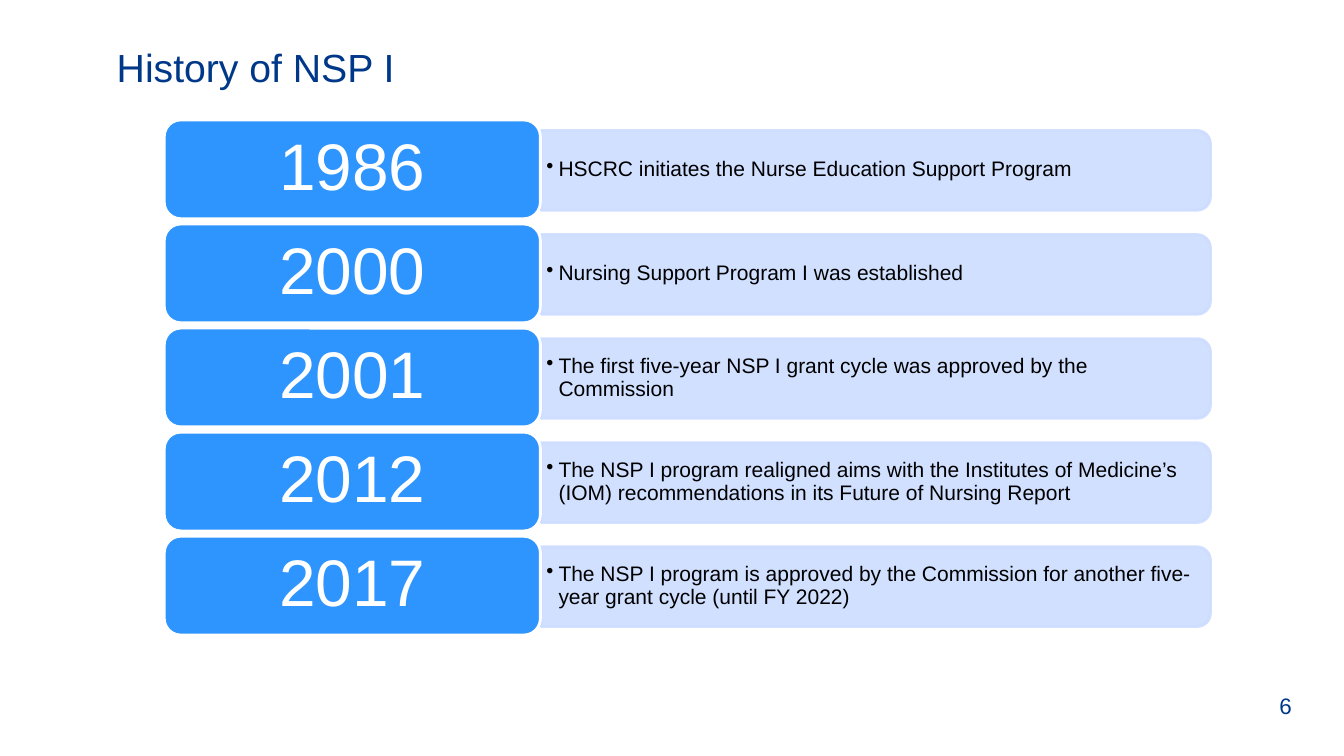
from lxml import etree
from pptx import Presentation
from pptx.dml.color import RGBColor
from pptx.enum.shapes import MSO_SHAPE
from pptx.enum.text import MSO_ANCHOR, PP_ALIGN
from pptx.oxml.ns import qn
from pptx.util import Inches, Pt

ROUND = MSO_SHAPE.ROUNDED_RECTANGLE
BAR = MSO_SHAPE.ROUND_2_SAME_RECTANGLE
TOP, MIDDLE = MSO_ANCHOR.TOP, MSO_ANCHOR.MIDDLE
LEFT, CENTER = PP_ALIGN.LEFT, PP_ALIGN.CENTER

NAVY = RGBColor(0x00, 0x38, 0x89)
BLUE = RGBColor(0x2E, 0x95, 0xFF)
PALE = RGBColor(0xCD, 0xDD, 0xFF)
WHITE = RGBColor(0xFF, 0xFF, 0xFF)
BLACK = RGBColor(0x00, 0x00, 0x00)

FIRST, LAST = 1.19, 5.32
EVENTS = [
    ("1986", "HSCRC initiates the Nurse Education Support Program"),
    ("2000", "Nursing Support Program I was established"),
    ("2001", "The first five-year NSP I grant cycle was approved by the Commission"),
    ("2012", "The NSP I program realigned aims with the Institutes of Medicine’s "
             "(IOM) recommendations in its Future of Nursing Report"),
    ("2017", "The NSP I program is approved by the Commission for another "
             "five-year grant cycle (until FY 2022)"),
]


def apply(target, values):
    for name, value in values.items():
        setattr(target, name, value)


def write(shape, text, size, color, anchor=MIDDLE, align=LEFT, pad=(0.1, 0.05), space=1.0):
    side, edge = map(Inches, pad)
    frame = shape.text_frame
    apply(frame, {
        "word_wrap": True, "vertical_anchor": anchor,
        "margin_left": side, "margin_right": side,
        "margin_top": edge, "margin_bottom": edge,
    })
    line = frame.paragraphs[0]
    apply(line, {"alignment": align, "line_spacing": space})
    run = line.add_run()
    run.text = text
    apply(run.font, {"name": "Arial", "size": Pt(size)})
    run.font.color.rgb = color
    return line


def add_text(slide, box, text, size, color, **style):
    shape = slide.shapes.add_textbox(*map(Inches, box))
    return write(shape, text, size, color, **style)


def add_block(slide, kind, box, fill, edge):
    shape = slide.shapes.add_shape(kind, *map(Inches, box))
    shape.shadow.inherit = False
    shape.fill.solid()
    shape.fill.fore_color.rgb = fill
    shape.line.color.rgb = edge
    shape.line.width = Pt(2)
    return shape


def add_bullet(line):
    props = line._p.get_or_add_pPr()
    props.set("marL", str(Inches(0.12)))
    props.set("indent", str(Inches(-0.12)))
    etree.SubElement(props, qn("a:buChar")).set("char", "•")


def add_bar(slide, top):
    bar = add_block(slide, BAR, (8.29, top - 2.82, 0.79, 6.64), PALE, PALE)
    bar.rotation = 90
    for color in bar._element.spPr.iter(qn("a:srgbClr")):
        etree.SubElement(color, qn("a:alpha")).set("val", "90000")


def add_event(slide, top, year, text):
    add_bar(slide, top)
    line = add_text(slide, (5.36, top + 0.14, 6.6, 0.71), text, 15, BLACK,
                    pad=(0.06, 0.03), space=0.9)
    add_bullet(line)
    block = add_block(slide, ROUND, (1.63, top, 3.73, 0.98), BLUE, WHITE)
    write(block, year, 47, WHITE, align=CENTER, pad=(0.2, 0.1), space=0.9)


def main():
    deck = Presentation()
    apply(deck, {"slide_width": Inches(13.33), "slide_height": Inches(7.5)})
    slide = deck.slides.add_slide(deck.slide_layouts[6])
    add_text(slide, (12.59, 6.8, 0.63, 0.4), "6", 16, NAVY)
    add_text(slide, (1.06, 0.38, 11.5, 0.66), "History of NSP I", 28, NAVY, anchor=TOP)
    step = (LAST - FIRST) / (len(EVENTS) - 1)
    for row, (year, text) in enumerate(EVENTS):
        add_event(slide, FIRST + row * step, year, text)
    deck.save("out.pptx")


if __name__ == "__main__":
    main()
